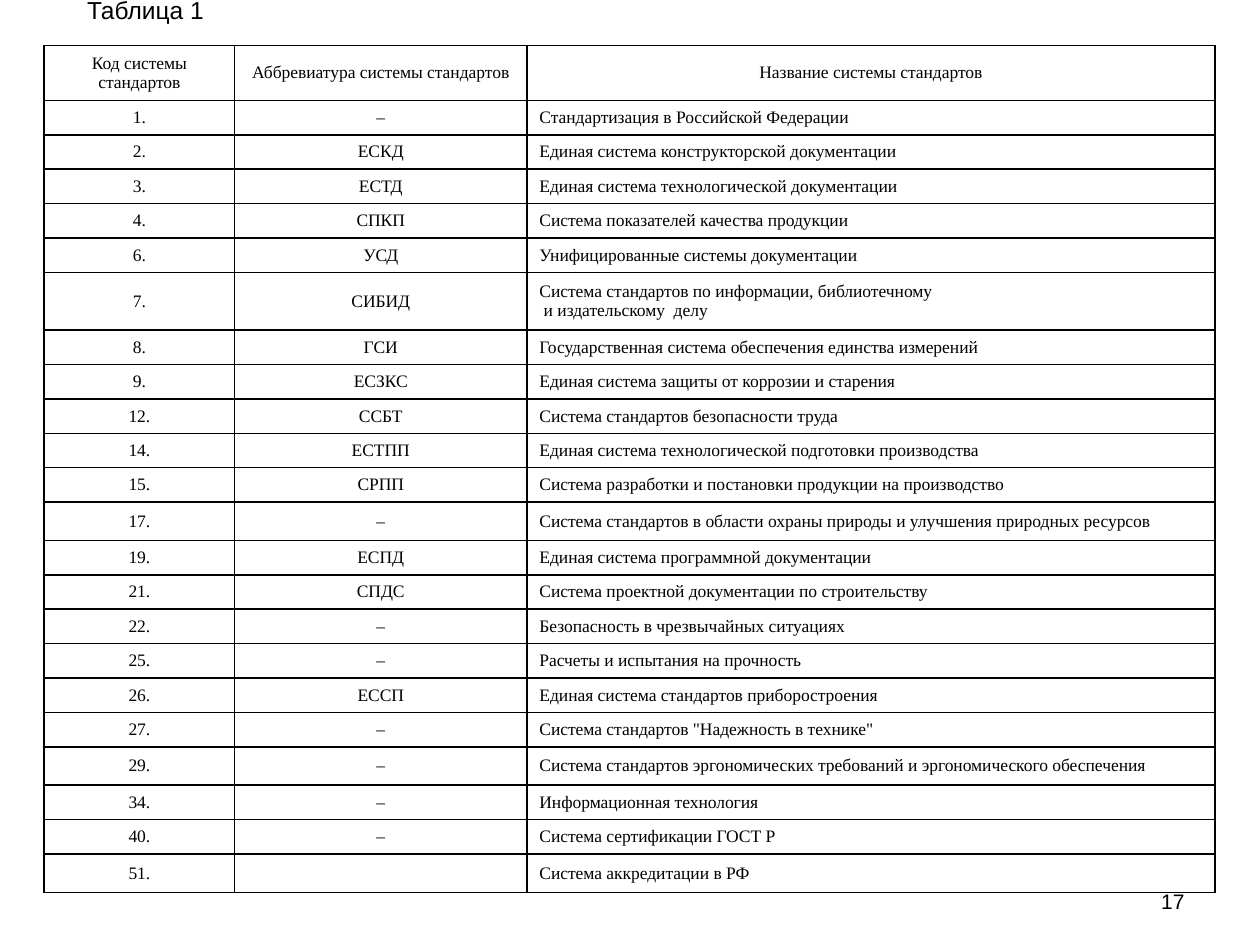
import pptx
import pptx.util
import pptx.dml.color
import pptx.enum.text
import pptx.oxml

Cm, Pt = pptx.util.Cm, pptx.util.Pt
Align = pptx.enum.text.PP_ALIGN
Middle = pptx.enum.text.MSO_ANCHOR.MIDDLE
Fit = pptx.enum.text.MSO_AUTO_SIZE

TITLE = "Таблица 1"
NUMBER = "17"
HEAD = ("Код системы стандартов", "Аббревиатура системы стандартов",
        "Название системы стандартов")
ROWS = [
    ("1.", "–", "Стандартизация в Российской Федерации"),
    ("2.", "ЕСКД", "Единая система конструкторской документации"),
    ("3.", "ЕСТД", "Единая система технологической документации"),
    ("4.", "СПКП", "Система показателей качества продукции"),
    ("6.", "УСД", "Унифицированные системы документации"),
    ("7.", "СИБИД", "Система стандартов по информации, библиотечному\n"
                    " и издательскому  делу"),
    ("8.", "ГСИ", "Государственная система обеспечения единства измерений"),
    ("9.", "ЕСЗКС", "Единая система защиты от коррозии и старения"),
    ("12.", "ССБТ", "Система стандартов безопасности труда"),
    ("14.", "ЕСТПП", "Единая система технологической подготовки производства"),
    ("15.", "СРПП", "Система разработки и постановки продукции на производство"),
    ("17.", "–", "Система стандартов в области охраны природы и улучшения природных ресурсов"),
    ("19.", "ЕСПД", "Единая система программной документации"),
    ("21.", "СПДС", "Система проектной документации по строительству"),
    ("22.", "–", "Безопасность в чрезвычайных ситуациях"),
    ("25.", "–", "Расчеты и испытания на прочность"),
    ("26.", "ЕССП", "Единая система стандартов приборостроения"),
    ("27.", "–", "Система стандартов \"Надежность в технике\""),
    ("29.", "–", "Система стандартов эргономических требований и эргономического обеспечения"),
    ("34.", "–", "Информационная технология"),
    ("40.", "–", "Система сертификации ГОСТ Р"),
    ("51.", "", "Система аккредитации в РФ"),
]
THEME = {
    "ink": "000000", "paper": "FFFFFF", "line": 1,
    "title": ("Arial", 14), "number": ("Arial", 12),
    "cell": ("Times New Roman", 10),
}
LEFT, TOP, HEIGHT = 0.89, 0.92, 17.08
WIDTHS = (3.84, 5.89, 13.87)
ALIGNS = (Align.CENTER, Align.CENTER, Align.JUSTIFY)
TALL = {0: 1.09, 6: 1.16, 12: 0.77, 19: 0.77, 22: 0.78}


def color(key):
    return pptx.dml.color.RGBColor.from_string(THEME[key])


def write(frame, text, style, align):
    face, size = THEME[style]
    frame.text = text
    for par in frame.paragraphs:
        par.alignment = align
        par.font.name = face
        par.font.size = Pt(size)
        par.font.bold = False
        par.font.color.rgb = color("ink")
        if not text:
            end = pptx.oxml.parse_xml(
                '<a:endParaRPr xmlns:a="http://schemas.openxmlformats.org/'
                f'drawingml/2006/main" sz="{size * 100}"/>')
            par._p.append(end)


def border(cell):
    props = cell._tc.get_or_add_tcPr()
    for side in "LRTB":
        props.append(pptx.oxml.parse_xml(
            f'<a:ln{side} xmlns:a="http://schemas.openxmlformats.org/'
            f'drawingml/2006/main" w="{Pt(THEME["line"])}"><a:solidFill>'
            f'<a:srgbClr val="{THEME["ink"]}"/></a:solidFill></a:ln{side}>'))


def label(shape, box, text, style, align, wrap):
    shape.left, shape.top, shape.width, shape.height = map(Cm, box)
    frame = shape.text_frame
    write(frame, text, style, align)
    frame.vertical_anchor = Middle
    frame.word_wrap = wrap
    frame.auto_size = Fit.NONE if wrap else Fit.SHAPE_TO_FIT_TEXT


def fill_table(slide):
    lines = [HEAD] + ROWS
    table = slide.shapes.add_table(
        len(lines), len(HEAD), Cm(LEFT), Cm(TOP),
        Cm(sum(WIDTHS)), Cm(HEIGHT)).table
    table.first_row = table.horz_banding = False
    for col, width in zip(table.columns, WIDTHS):
        col.width = Cm(width)
    plain = (HEIGHT - sum(TALL.values())) / (len(lines) - len(TALL))
    for i, line in enumerate(lines):
        table.rows[i].height = Cm(TALL.get(i, plain))
        for j, text in enumerate(line):
            cell = table.cell(i, j)
            write(cell.text_frame, text, "cell", ALIGNS[j] if i else Align.CENTER)
            cell.vertical_anchor = Middle
            border(cell)
            cell.fill.solid()
            cell.fill.fore_color.rgb = color("paper")


def main():
    deck = pptx.Presentation()
    deck.slide_width, deck.slide_height = Cm(25.4), Cm(19.05)
    slide = deck.slides.add_slide(deck.slide_layouts[5])
    number = slide.shapes.add_textbox(0, 0, 0, 0)
    label(number, (18.2, 17.65, 5.93, 1.02), NUMBER, "number", Align.RIGHT, True)
    label(slide.shapes.title, (1.5, -0.23, 3.1, 0.84), TITLE, "title",
          Align.LEFT, False)
    fill_table(slide)
    deck.save("out.pptx")


if __name__ == "__main__":
    main()
